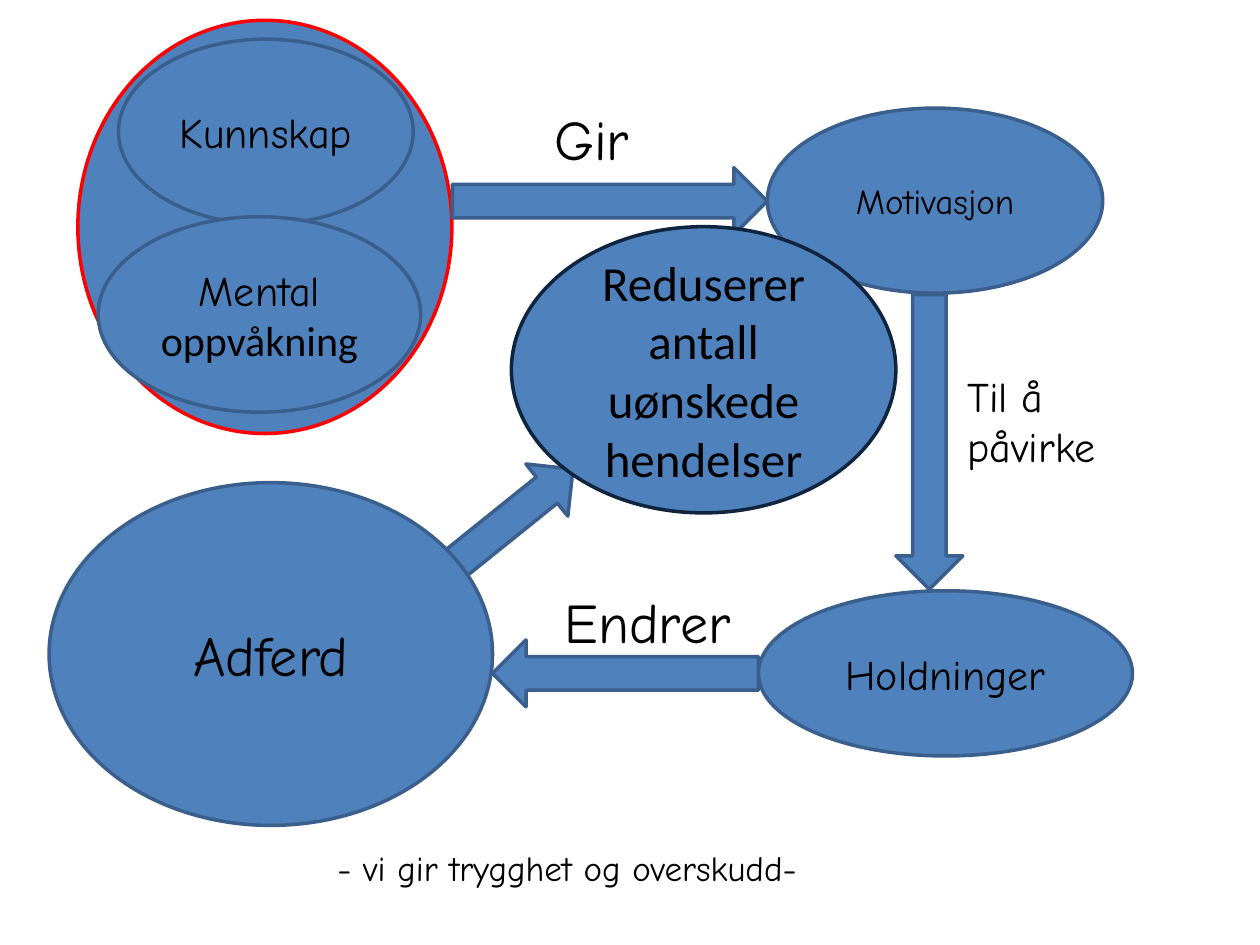
from dataclasses import dataclass

from pptx import Presentation
from pptx.dml.color import RGBColor as RGB
from pptx.enum.shapes import MSO_SHAPE as Shape
from pptx.enum.text import MSO_ANCHOR as Anchor, MSO_AUTO_SIZE as AutoSize, PP_ALIGN as Align
from pptx.util import Cm, Pt


@dataclass(frozen=True)
class Theme:
    """Colours, fonts and type sizes of the slide."""
    fill: RGB = RGB(0x4F, 0x81, 0xBD)
    edge: RGB = RGB(0x3A, 0x5F, 0x8C)
    group_edge: RGB = RGB(0xFF, 0, 0)
    result_edge: RGB = RGB(0x0F, 0x24, 0x3E)
    ink: RGB = RGB(0, 0, 0)
    hand: str = "Comic Neue"
    plain: str = "Calibri"
    small: Pt = Pt(20)
    medium: Pt = Pt(24)
    large: Pt = Pt(28)
    huge: Pt = Pt(32)
    line: Pt = Pt(2)


T = Theme()


def set_attrs(obj, values):
    """Set every named value on the object."""
    for name, value in values.items():
        setattr(obj, name, value)


def write(tf, lines, size, align=Align.LEFT):
    """Fill a text frame with one paragraph per (text, font) pair."""
    for i, (text, font) in enumerate(lines):
        p = tf.add_paragraph() if i else tf.paragraphs[0]
        p.alignment = align
        r = p.add_run()
        r.text = text
        set_attrs(r.font, {"name": font, "size": size})
        r.font.color.rgb = T.ink


def add_block(s, kind, box, edge=T.edge, rotation=0):
    """Add a filled, outlined preset shape."""
    sp = s.shapes.add_shape(kind, *map(Cm, box))
    sp.rotation = rotation
    sp.shadow.inherit = False
    sp.fill.solid()
    sp.fill.fore_color.rgb = T.fill
    sp.line.color.rgb = edge
    sp.line.width = T.line
    return sp


def add_bubble(s, box, lines, size, edge=T.edge):
    """Add an ellipse with centred text."""
    tf = add_block(s, Shape.OVAL, box, edge).text_frame
    set_attrs(tf, {"word_wrap": True, "vertical_anchor": Anchor.MIDDLE})
    write(tf, lines, size, Align.CENTER)


def add_label(s, box, text, size, wrap=True):
    """Add a free-standing text label."""
    tf = s.shapes.add_textbox(*map(Cm, box)).text_frame
    set_attrs(tf, {"word_wrap": wrap, "auto_size": AutoSize.SHAPE_TO_FIT_TEXT})
    write(tf, [(text, T.hand)], size)


def main():
    """Build the slide and save it."""
    prs = Presentation()
    set_attrs(prs, {"slide_width": Cm(25.4), "slide_height": Cm(19.05)})
    s = prs.slides.add_slide(prs.slide_layouts[6])

    add_label(s, (6.55, 16.94, 10.64, 1.09), "- vi gir trygghet og overskudd-", T.small, False)
    add_block(s, Shape.LEFT_ARROW, (6.78, 10.46, 5.36, 1.35), rotation=141.2)
    add_block(s, Shape.OVAL, (1.57, 0.41, 7.54, 8.33), T.group_edge)
    add_bubble(s, (2.39, 0.79, 5.94, 3.73), [("Kunnskap", T.hand)], T.medium)
    add_block(s, Shape.RIGHT_ARROW, (9.12, 3.38, 6.35, 1.35))
    add_bubble(s, (15.47, 2.18, 6.76, 3.73), [("Motivasjon", T.hand)], T.small)
    add_block(s, Shape.DOWN_ARROW, (18.06, 5.94, 1.35, 5.94))
    add_bubble(s, (15.29, 11.91, 7.54, 3.33), [("Holdninger", T.hand)], T.medium)
    add_bubble(s, (1.98, 4.37, 6.5, 3.94),
               [("Mental", T.hand), ("oppvåkning", T.plain)], T.medium)
    add_bubble(s, (0.99, 9.73, 8.94, 6.91), [("Adferd", T.hand)], T.huge)
    add_block(s, Shape.LEFT_ARROW, (9.93, 12.9, 5.36, 1.35))
    add_label(s, (19.25, 7.34, 3.76, 2.31), "Til å påvirke", T.medium)
    add_label(s, (10.92, 1.98, 3.38, 1.63), "Gir", T.huge)
    add_label(s, (11.13, 11.71, 4.22, 1.63), "Endrer", T.huge, False)
    add_bubble(s, (10.31, 4.57, 7.75, 5.77),
               [("Reduserer antall uønskede hendelser", T.plain)], T.large, T.result_edge)

    prs.save("out.pptx")


if __name__ == "__main__":
    main()
